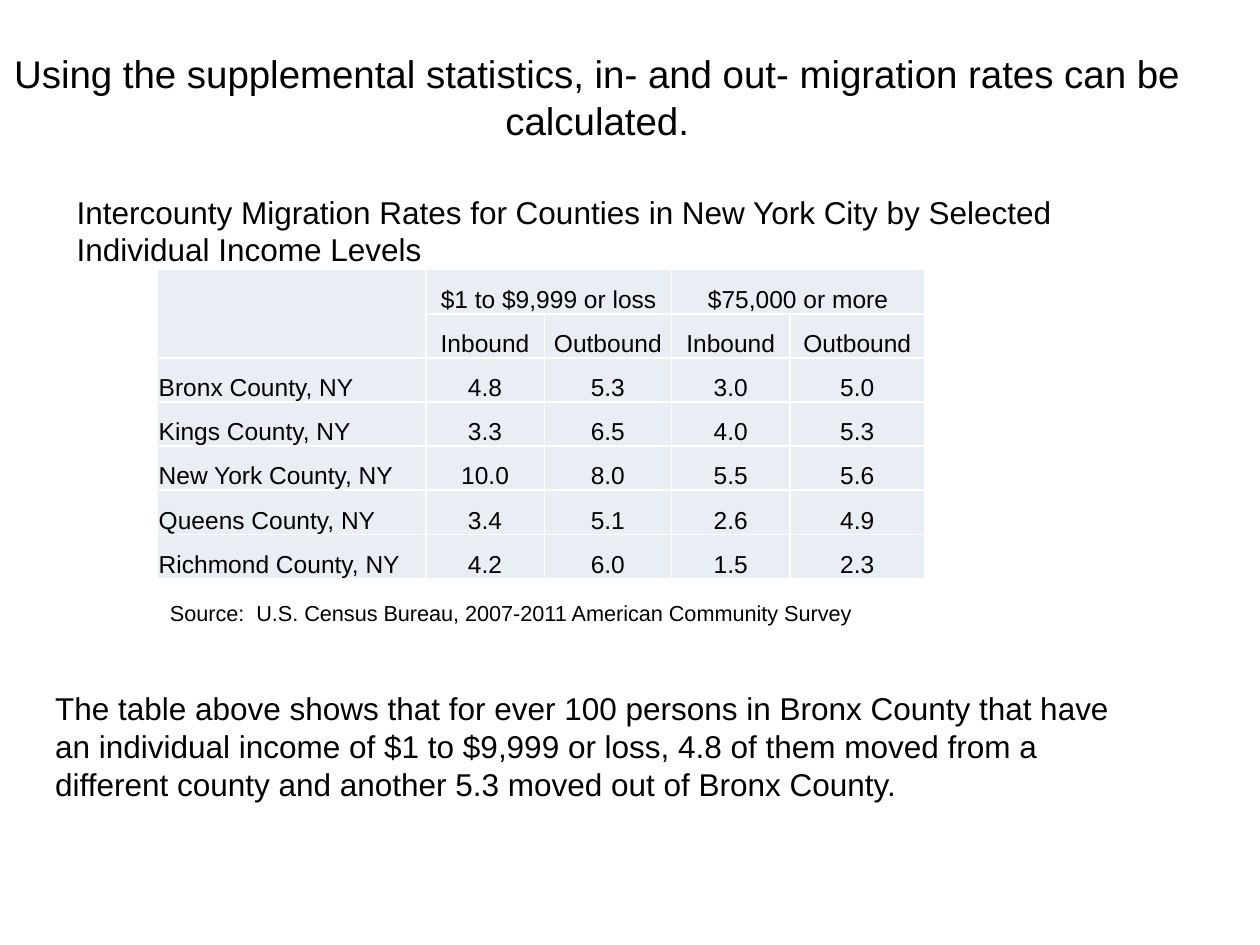
from lxml import etree
from pptx import Presentation
from pptx.dml.color import RGBColor
from pptx.enum.text import MSO_ANCHOR, MSO_AUTO_SIZE, PP_ALIGN
from pptx.oxml.ns import qn
from pptx.util import Inches, Pt

LEFT, CENTER = PP_ALIGN.LEFT, PP_ALIGN.CENTER
TOP, BOTTOM = MSO_ANCHOR.TOP, MSO_ANCHOR.BOTTOM
NO_FIT = MSO_AUTO_SIZE.NONE
FONT = "Arial"
COLORS = {"text": "000000", "cell": "E9EDF4", "rule": "FFFFFF"}

TITLE = ("Using the supplemental statistics, in- and out- migration rates "
         "can be calculated.")
CAPTION = ("Intercounty Migration Rates for Counties in New York City by "
           "Selected Individual Income Levels")
SOURCE = "Source:  U.S. Census Bureau, 2007-2011 American Community Survey"
NOTE = ("The table above shows that for ever 100 persons in Bronx County that "
        "have an individual income of $1 to $9,999 or loss, 4.8 of them moved "
        "from a different county and another 5.3 moved out of Bronx County.")

WIDTHS = [2.13, 0.94, 1.01, 0.94, 1.07]
ROW_HEIGHT = 0.35
ROWS = [
    ["", "$1 to $9,999 or loss", "", "$75,000 or more", ""],
    ["", "Inbound", "Outbound", "Inbound", "Outbound"],
    ["Bronx County, NY", "4.8", "5.3", "3.0", "5.0"],
    ["Kings County, NY", "3.3", "6.5", "4.0", "5.3"],
    ["New York County, NY", "10.0", "8.0", "5.5", "5.6"],
    ["Queens County, NY", "3.4", "5.1", "2.6", "4.9"],
    ["Richmond County, NY", "4.2", "6.0", "1.5", "2.3"],
]
# Top, left, bottom and right cell of each merged block
MERGES = [(0, 0, 1, 0), (0, 1, 0, 2), (0, 3, 0, 4)]


def write(frame, text, size, align=LEFT):
    par = frame.paragraphs[0]
    par.alignment = align
    run = par.add_run()
    run.text = text
    run.font.name = FONT
    run.font.size = Pt(size)
    run.font.color.rgb = RGBColor.from_string(COLORS["text"])


def add_title(slide, text):
    title = slide.shapes.title
    title.left, title.top = Inches(0), Inches(0.35)
    title.width, title.height = Inches(9.48), Inches(0.92)
    frame = title.text_frame
    frame.auto_size = NO_FIT
    frame.vertical_anchor = TOP
    write(frame, text, 22, CENTER)


def add_text(slide, box, text, size):
    frame = slide.shapes.add_textbox(*map(Inches, box)).text_frame
    frame.word_wrap = True
    write(frame, text, size)


def add_borders(cell):
    props = cell._tc.get_or_add_tcPr()
    for i, side in enumerate(("lnL", "lnR", "lnT", "lnB")):
        line = etree.Element(qn(f"a:{side}"), w=str(Pt(1)))
        fill = etree.SubElement(line, qn("a:solidFill"))
        etree.SubElement(fill, qn("a:srgbClr"), val=COLORS["rule"])
        props.insert(i, line)


def style_cell(cell):
    cell.fill.solid()
    cell.fill.fore_color.rgb = RGBColor.from_string(COLORS["cell"])
    cell.vertical_anchor = BOTTOM
    cell.margin_left = cell.margin_right = cell.margin_top = Inches(0.01)
    cell.margin_bottom = 0
    add_borders(cell)


def add_rates(slide, left, top):
    size = (sum(WIDTHS), ROW_HEIGHT * len(ROWS))
    table = slide.shapes.add_table(
        len(ROWS), len(WIDTHS), *map(Inches, (left, top, *size))).table
    for col, width in zip(table.columns, WIDTHS):
        col.width = Inches(width)
    for r, row in enumerate(ROWS):
        table.rows[r].height = Inches(ROW_HEIGHT)
        for c, text in enumerate(row):
            cell = table.cell(r, c)
            style_cell(cell)
            if text:
                write(cell.text_frame, text, 14, CENTER if c else LEFT)
    for r1, c1, r2, c2 in MERGES:
        table.cell(r1, c1).merge(table.cell(r2, c2))


def main():
    deck = Presentation()
    deck.slide_width, deck.slide_height = Inches(10), Inches(7.5)
    slide = deck.slides.add_slide(deck.slide_layouts.get_by_name("Title Only"))
    add_title(slide, TITLE)
    add_rates(slide, 1.25, 2.14)
    add_text(slide, (0.51, 1.48, 7.94, 0.63), CAPTION, 18)
    add_text(slide, (1.25, 4.71, 6.58, 0.28), SOURCE, 12.4)
    add_text(slide, (0.34, 5.42, 8.64, 1.01), NOTE, 18)
    deck.save("out.pptx")


if __name__ == "__main__":
    main()
